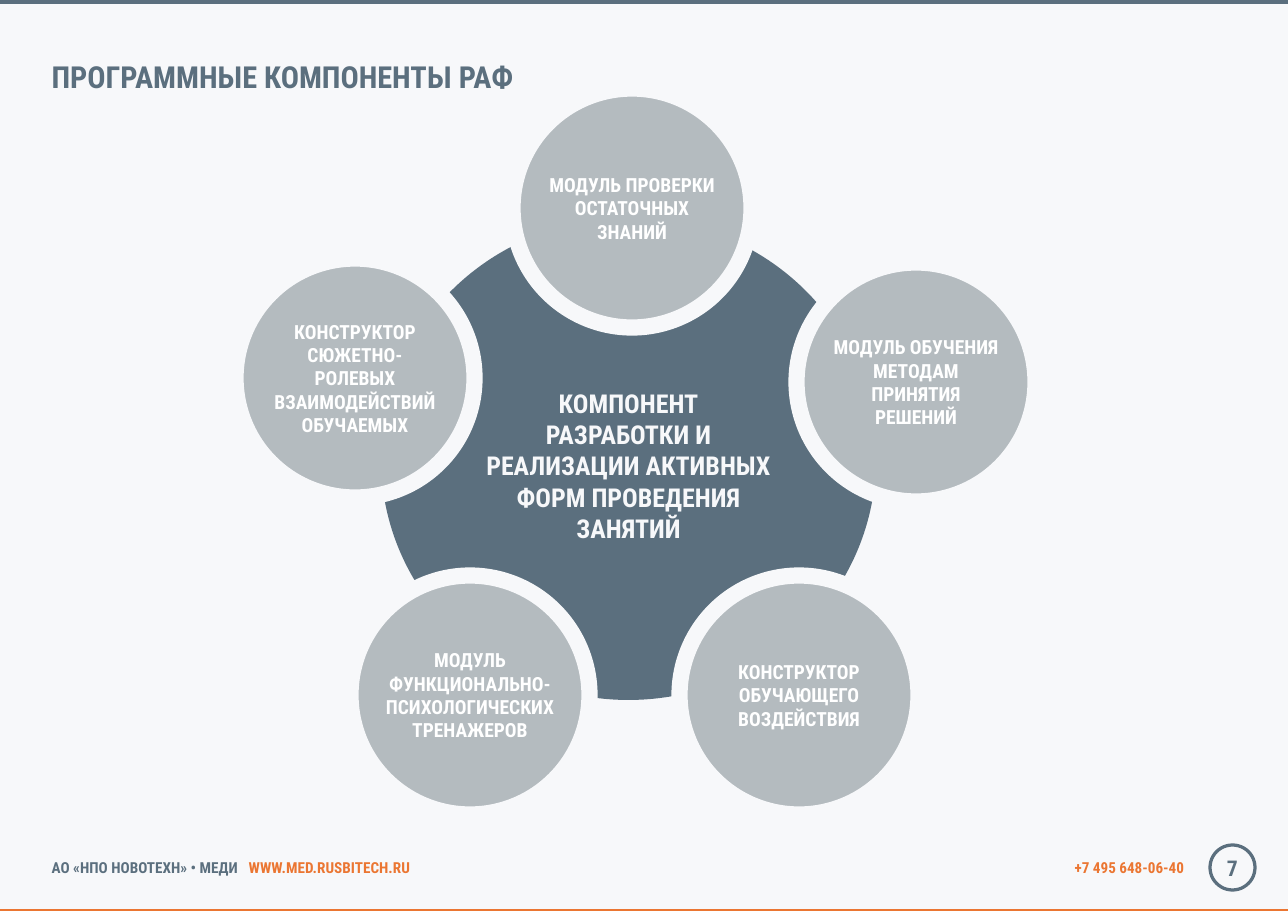
import pptx
import pptx.util
import pptx.dml.color
import pptx.enum.shapes
import pptx.enum.text
import pptx.oxml.ns
import lxml.etree

SHAPE = pptx.enum.shapes.MSO_SHAPE
ALIGN = pptx.enum.text.PP_ALIGN
ANCHOR = pptx.enum.text.MSO_ANCHOR
FIT = pptx.enum.text.MSO_AUTO_SIZE

COLORS = {"slate": "5B6F7E", "orange": "EB7632", "gray": "B4BBBF",
          "paper": "F7F8FA", "white": "FFFFFF"}
FONT = "Roboto Condensed"
PX = 914400 / 77.9
WIDE, HIGH = 1288, 911

# Each bar: top, height, color
BARS = [(0, 4, "slate"), (909, 2, "orange")]

# Each label: box, size, alignment, tab stop, runs of text and color
LABELS = [
    ((44, 54, 806, 44), 28, ALIGN.LEFT, None,
     [("ПРОГРАММНЬIЕ КОМПОНЕНТЬI РАФ", "slate")]),
    ((44, 855, 460, 26), 14, ALIGN.LEFT, 197,
     [("АО «НПО НОВОТЕХН» • МЕДИ\t", "slate"), ("WWW.MED.RUSBITECH.RU", "orange")]),
    ((645, 855, 547, 26), 14, ALIGN.RIGHT, None,
     [("+7 495 648-06-40", "orange")]),
]

CORE = ["КОМПОНЕНТ", "РАЗРАБОТКИ И",
        "РЕАЛИЗАЦИИ АКТИВНЫХ ФОРМ ПРОВЕДЕНИЯ", "ЗАНЯТИЙ"]
CORE_BOX = (381, 218, 495, 482)
CORE_INSETS = (8, 17, 8, 4)

# Each module: center x, center y, text
MODULES = [
    (799, 695, "КОНСТРУКТОР ОБУЧАЮЩЕГО ВОЗДЕЙСТВИЯ"),
    (470, 695, "МОДУЛЬ ФУНКЦИОНАЛЬНО-ПСИХОЛОГИЧЕСКИХ ТРЕНАЖЕРОВ"),
    (355, 378, "КОНСТРУКТОР СЮЖЕТНО-РОЛЕВЫХ ВЗАИМОДЕЙСТВИЙ ОБУЧАЕМЫХ"),
    (916, 382, "МОДУЛЬ ОБУЧЕНИЯ МЕТОДАМ ПРИНЯТИЯ РЕШЕНИЙ"),
    (632, 208, "МОДУЛЬ ПРОВЕРКИ ОСТАТОЧНЫХ ЗНАНИЙ"),
]
MODULE_SIZE = 239
PAGE = ("7", (1210, 845, 45, 45))


def emu(px):
    return round(px * PX)


def rgb(name):
    return pptx.dml.color.RGBColor.from_string(COLORS[name])


def assign(target, **values):
    for key, value in values.items():
        setattr(target, key, value)


def write(para, text, size, color):
    run = para.add_run()
    run.text = text
    assign(run.font, name=FONT, size=pptx.util.Pt(size), bold=True)
    run.font.color.rgb = rgb(color)


def draw(kind, box, fill, edge=None, width=0):
    shape = slide.shapes.add_shape(kind, *map(emu, box))
    shape.shadow.inherit = False
    shape.fill.solid()
    shape.fill.fore_color.rgb = rgb(fill)
    if edge:
        shape.line.color.rgb = rgb(edge)
        shape.line.width = pptx.util.Pt(width)
    else:
        shape.line.fill.background()
    return shape


def fill_text(shape, lines, size, color, insets=(0, 0, 0, 0)):
    """Center lines of text inside a shape."""
    frame = shape.text_frame
    assign(frame, word_wrap=True, vertical_anchor=ANCHOR.MIDDLE)
    sides = ("margin_left", "margin_top", "margin_right", "margin_bottom")
    assign(frame, **dict(zip(sides, map(emu, insets))))
    for i, line in enumerate(lines):
        para = frame.add_paragraph() if i else frame.paragraphs[0]
        para.alignment = ALIGN.CENTER
        write(para, line, size, color)


def add_tab(para, stop):
    props = para._p.get_or_add_pPr()
    qn = pptx.oxml.ns.qn
    tabs = lxml.etree.SubElement(props, qn("a:tabLst"))
    lxml.etree.SubElement(tabs, qn("a:tab"), pos=str(emu(stop)), algn="l")


def add_label(box, size, align, stop, runs):
    frame = slide.shapes.add_textbox(*map(emu, box)).text_frame
    assign(frame, word_wrap=True, auto_size=FIT.SHAPE_TO_FIT_TEXT)
    para = frame.paragraphs[0]
    para.alignment = align
    if stop:
        add_tab(para, stop)
    for text, color in runs:
        write(para, text, size, color)


deck = pptx.Presentation()
assign(deck, slide_width=emu(WIDE), slide_height=emu(HIGH))
slide = deck.slides.add_slide(deck.slide_layouts[6])
back = slide.background.fill
back.solid()
back.fore_color.rgb = rgb("paper")

for top, height, color in BARS:
    draw(SHAPE.RECTANGLE, (0, top, WIDE, height), color)
for label in LABELS:
    add_label(*label)

number, box = PAGE
fill_text(draw(SHAPE.OVAL, box, "paper", "slate", 3), [number], 20, "slate")

fill_text(draw(SHAPE.OVAL, CORE_BOX, "slate"), CORE, 24, "paper", CORE_INSETS)
for x, y, text in MODULES:
    box = (x - MODULE_SIZE / 2, y - MODULE_SIZE / 2, MODULE_SIZE, MODULE_SIZE)
    fill_text(draw(SHAPE.OVAL, box, "gray", "paper", 15), [text], 18, "white")

deck.save("out.pptx")
